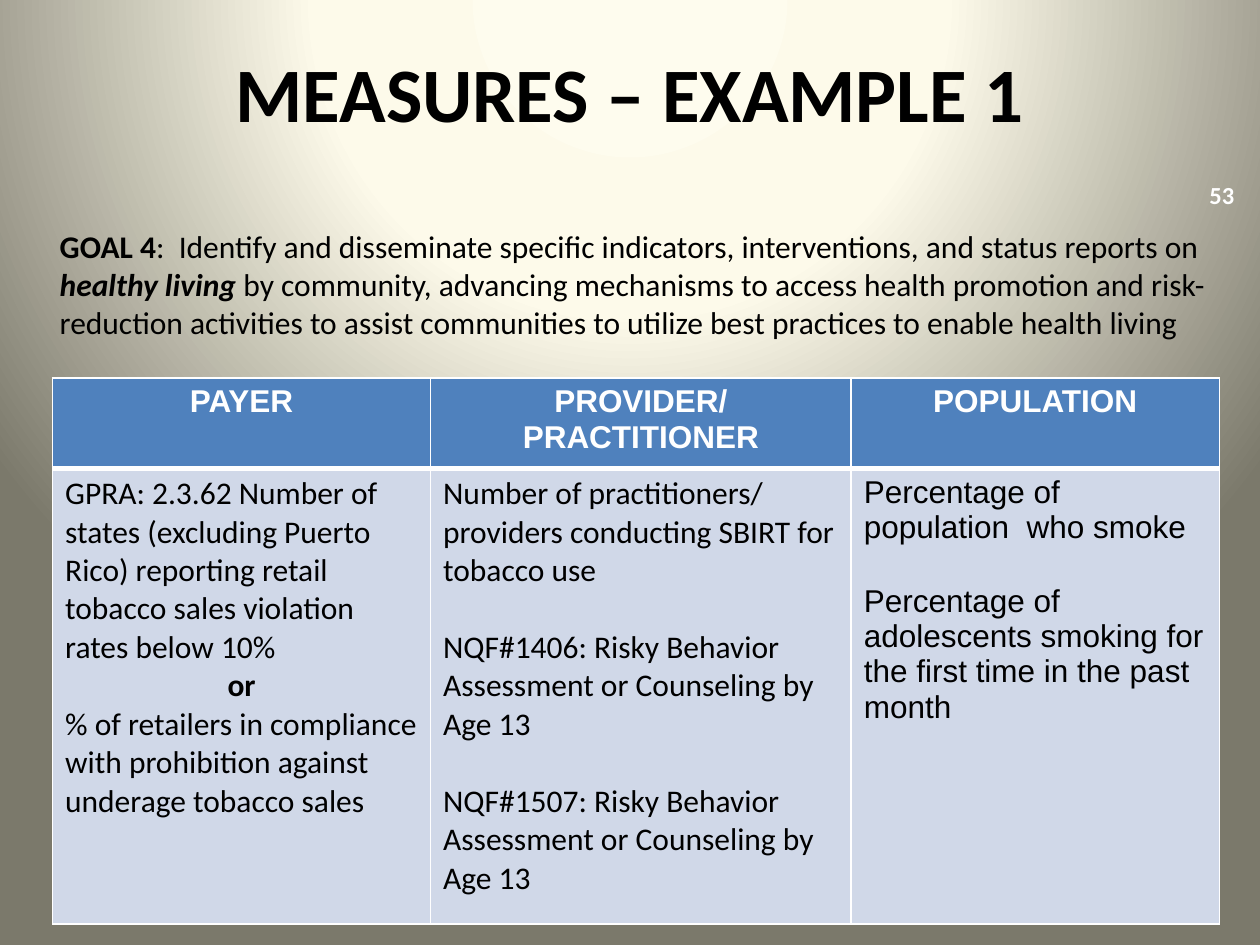
from dataclasses import dataclass

from lxml import etree
from pptx import Presentation
from pptx.dml.color import RGBColor
from pptx.enum.text import MSO_ANCHOR, MSO_AUTO_SIZE, PP_ALIGN
from pptx.oxml import parse_xml
from pptx.oxml.ns import qn
from pptx.util import Cm, Pt

LEFT, CENTER = PP_ALIGN.LEFT, PP_ALIGN.CENTER
TOP, MIDDLE = MSO_ANCHOR.TOP, MSO_ANCHOR.MIDDLE
NO_AUTOFIT = MSO_AUTO_SIZE.NONE
DRAWING_NAMESPACE = "http://schemas.openxmlformats.org/drawingml/2006/main"


@dataclass(frozen=True)
class Theme:
    heading_font: str = "Calibri"
    table_font: str = "Arial"
    dark: str = "000000"
    light: str = "FFFFFF"
    header_fill: str = "4F81BD"
    body_fill: str = "D0D8E8"
    background: tuple = ((0, "FEFCEE"), (40, "FDFAEA"), (100, "7B796B"))
    title_size: int = 44
    text_size: int = 18
    number_size: int = 14
    paragraph_gap: int = 22
    thin_line: float = 1
    thick_line: float = 3


THEME = Theme()
DARK_TEXT = {"name": THEME.heading_font, "size": THEME.text_size, "color": THEME.dark, "bold": False}
ARIAL_TEXT = {**DARK_TEXT, "name": THEME.table_font}
HEADER_TEXT = {**ARIAL_TEXT, "color": THEME.light, "bold": True}
TITLE_TEXT = {**DARK_TEXT, "size": THEME.title_size, "bold": True}
NUMBER_TEXT = {**DARK_TEXT, "size": THEME.number_size, "color": THEME.light, "bold": True}

GOAL_RUNS = (
    ("GOAL 4", {"bold": True}),
    (":  Identify and disseminate specific indicators, interventions, and status reports on ", {}),
    ("healthy living ", {"bold": True, "italic": True}),
    ("by community, advancing mechanisms to access health promotion and risk-reduction "
     "activities to assist communities to utilize best practices to enable health living", {}),
)
COLUMN_WIDTHS = (7.62, 8.48, 7.42)
ROW_HEIGHTS = (1.82, 9.19)
HEADERS = (("PAYER",), ("PROVIDER/", "PRACTITIONER"), ("POPULATION",))
PAYER = (
    ("GPRA: 2.3.62 Number of states (excluding Puerto Rico) reporting retail "
     "tobacco sales violation rates below 10%", LEFT, {}),
    ("or", CENTER, {"bold": True}),
    ("% of retailers in compliance with prohibition against underage tobacco sales", LEFT, {}),
)
PROVIDER = (
    "Number of practitioners/ providers conducting SBIRT for tobacco use",
    "NQF#1406: Risky Behavior Assessment or Counseling by Age 13",
    "NQF#1507: Risky Behavior Assessment or Counseling by Age 13",
)
POPULATION = (
    "Percentage of population  who smoke",
    "Percentage of adolescents smoking for the first time in the past month",
)


def format_font(font, values):
    for name, value in values.items():
        if name == "color":
            font.color.rgb = RGBColor.from_string(value)
        else:
            setattr(font, name, Pt(value) if name == "size" else value)


def write_paragraph(paragraph, runs, base, alignment=LEFT, gap=0):
    paragraph.alignment = alignment
    paragraph.space_before = Pt(gap)
    for text, changes in runs:
        run = paragraph.add_run()
        run.text = text
        format_font(run.font, {**base, **changes})


def place(shape, box):
    for name, length in zip(("left", "top", "width", "height"), box):
        setattr(shape, name, Cm(length))


def set_frame(frame, anchor):
    for name, value in {"word_wrap": True, "auto_size": NO_AUTOFIT, "vertical_anchor": anchor}.items():
        setattr(frame, name, value)


def paint_background(slide):
    properties = slide.background.fill
    properties.solid()
    solid = slide.background._cSld.find(".//" + qn("a:solidFill"))
    stops = "".join(
        f'<a:gs pos="{position * 1000}"><a:srgbClr val="{color}"/></a:gs>'
        for position, color in THEME.background
    )
    gradient = parse_xml(
        f'<a:gradFill xmlns:a="{DRAWING_NAMESPACE}" rotWithShape="1"><a:gsLst>{stops}</a:gsLst>'
        '<a:path path="circle"><a:fillToRect l="50000" t="-80000" r="50000" b="180000"/></a:path>'
        "</a:gradFill>"
    )
    solid.getparent().replace(solid, gradient)


def add_title(slide, box):
    title = slide.shapes.title
    place(title, box)
    set_frame(title.text_frame, MIDDLE)
    write_paragraph(title.text_frame.paragraphs[0], (("MEASURES – EXAMPLE 1", {}),), TITLE_TEXT, CENTER)


def add_goal(slide, box):
    body = slide.placeholders[1]
    place(body, box)
    set_frame(body.text_frame, TOP)
    paragraph = body.text_frame.paragraphs[0]
    write_paragraph(paragraph, GOAL_RUNS, DARK_TEXT)
    properties = paragraph._p.get_or_add_pPr()
    properties.set("marL", str(Cm(0.95)))
    properties.set("indent", "0")
    etree.SubElement(properties, qn("a:buNone"))


def add_slide_number(slide, box):
    number = slide.shapes.add_textbox(*map(Cm, box))
    set_frame(number.text_frame, MIDDLE)
    write_paragraph(number.text_frame.paragraphs[0], (("53", {}),), NUMBER_TEXT)


def style_cell(cell, fill, thick_side):
    properties = cell._tc.get_or_add_tcPr()
    for side in ("lnL", "lnR", "lnT", "lnB"):
        width = THEME.thick_line if side == thick_side else THEME.thin_line
        line = etree.SubElement(properties, qn(f"a:{side}"), w=str(Pt(width)))
        color = etree.SubElement(line, qn("a:solidFill"))
        etree.SubElement(color, qn("a:srgbClr"), val=THEME.light)
    cell.fill.solid()
    cell.fill.fore_color.rgb = RGBColor.from_string(fill)


def fill_cell(cell, entries, base, gap=0):
    frame = cell.text_frame
    for index, (text, alignment, changes) in enumerate(entries):
        paragraph = frame.add_paragraph() if index else frame.paragraphs[0]
        write_paragraph(paragraph, ((text, changes),), base, alignment, gap if index else 0)


def add_measures_table(slide, left, top):
    width, height = sum(COLUMN_WIDTHS), sum(ROW_HEIGHTS)
    frame = slide.shapes.add_table(
        len(ROW_HEIGHTS), len(COLUMN_WIDTHS), Cm(left), Cm(top), Cm(width), Cm(height)
    )
    table = frame.table
    for row, row_height in zip(table.rows, ROW_HEIGHTS):
        row.height = Cm(row_height)
    bodies = (
        (PAYER, DARK_TEXT, 0),
        ([(text, LEFT, {}) for text in PROVIDER], DARK_TEXT, THEME.paragraph_gap),
        ([(text, LEFT, {}) for text in POPULATION], ARIAL_TEXT, THEME.paragraph_gap),
    )
    for index, (column_width, header, body) in enumerate(zip(COLUMN_WIDTHS, HEADERS, bodies)):
        table.columns[index].width = Cm(column_width)
        header_cell, body_cell = table.cell(0, index), table.cell(1, index)
        style_cell(header_cell, THEME.header_fill, "lnB")
        style_cell(body_cell, THEME.body_fill, "lnT")
        fill_cell(header_cell, [(text, CENTER, {}) for text in header], HEADER_TEXT)
        fill_cell(body_cell, *body)


def main():
    presentation = Presentation()
    presentation.slide_width, presentation.slide_height = Cm(25.4), Cm(19.05)
    slide = presentation.slides.add_slide(presentation.slide_layouts[1])
    paint_background(slide)
    add_slide_number(slide, (24.13, 3.61, 1.27, 0.64))
    add_title(slide, (1.27, 0.43, 22.86, 2.84))
    add_goal(slide, (0, 4.45, 25.4, 14.6))
    add_measures_table(slide, 1.06, 7.62)
    presentation.save("out.pptx")


if __name__ == "__main__":
    main()
